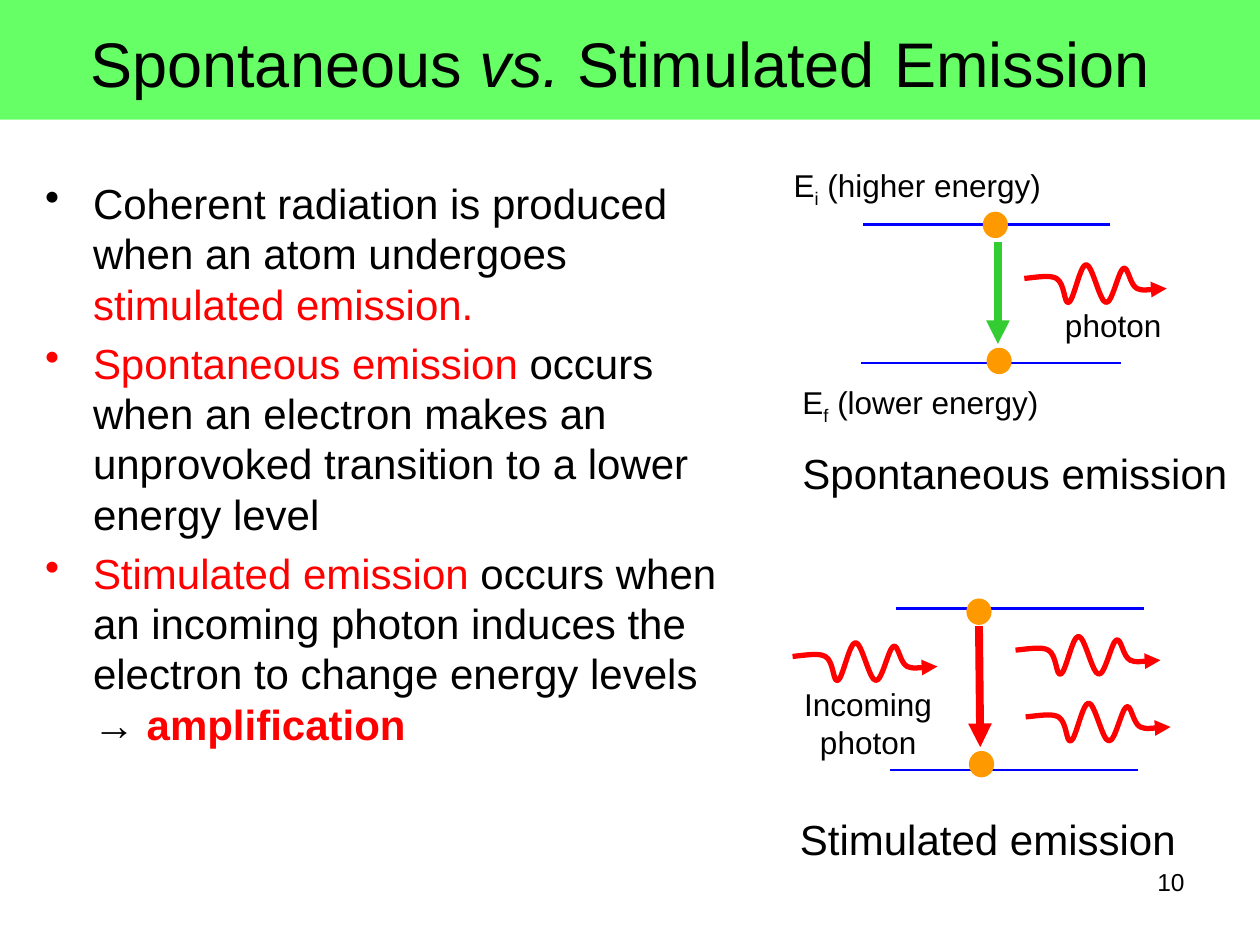
from lxml import etree
from pptx import Presentation
from pptx.dml.color import RGBColor
from pptx.enum.shapes import MSO_CONNECTOR, MSO_SHAPE
from pptx.enum.text import MSO_ANCHOR, PP_ALIGN
from pptx.oxml.ns import qn
from pptx.util import Inches, Pt

COLORS = {
    "banner": "66FF66", "text": "000000", "accent": "FF0000",
    "level": "0000FF", "electron": "FF9900", "decay": "33CC33",
}
WAVE_SIZE = (1.15, 0.33)
WAVE_POINTS = [
    (0, 0.11),
    (0.1, 0.1), (0.21, 0.08), (0.26, 0.11),
    (0.33, 0.15), (0.32, 0.32), (0.36, 0.3),
    (0.4, 0.28), (0.45, 0), (0.5, 0),
    (0.55, 0), (0.61, 0.3), (0.66, 0.3),
    (0.71, 0.31), (0.76, 0.05), (0.8, 0.03),
    (0.84, 0.01), (0.85, 0.16), (0.91, 0.19),
    (0.96, 0.21), (1.1, 0.19), (1.15, 0.19),
]


def color_of(name):
    """Return the named colour."""
    return RGBColor.from_string(COLORS[name])


def write_text(shape, paragraphs, size=18, align=PP_ALIGN.LEFT, wrap=True,
               anchor=MSO_ANCHOR.TOP, bullet=None):
    """Fill a shape with paragraphs, each a list of (text, format) runs."""
    frame = shape.text_frame
    frame.word_wrap = wrap
    frame.vertical_anchor = anchor
    for index, runs in enumerate(paragraphs):
        paragraph = frame.paragraphs[0] if index == 0 else frame.add_paragraph()
        paragraph.alignment = align
        if bullet:
            paragraph.space_before = Pt(size * 0.2)
            properties = paragraph._p.get_or_add_pPr()
            properties.set("marL", str(Inches(0.38)))
            properties.set("indent", str(-Inches(0.38)))
            etree.SubElement(properties, qn("a:buChar")).set("char", bullet)
        for text, style in runs:
            run = paragraph.add_run()
            run.text = text
            font = run.font
            font.name = "Arial"
            font.size = Pt(style.get("size", size))
            font.bold = style.get("bold", False)
            font.italic = style.get("italic", False)
            font.color.rgb = color_of(style.get("color", "text"))
            if "baseline" in style:
                run._r.get_or_add_rPr().set("baseline", str(style["baseline"]))


def add_text(slide, left, top, width, height, paragraphs, **style):
    """Add a text box with formatted paragraphs."""
    box = slide.shapes.add_textbox(*map(Inches, (left, top, width, height)))
    write_text(box, paragraphs, **style)


def add_filled(slide, kind, left, top, width, height, color):
    """Add a preset shape with a plain fill and no outline."""
    shape = slide.shapes.add_shape(kind, *map(Inches, (left, top, width, height)))
    shape.shadow.inherit = False
    shape.fill.solid()
    shape.fill.fore_color.rgb = color_of(color)
    shape.line.fill.background()
    return shape


def style_line(shape, color, width, arrow):
    """Set the stroke of a line and its optional arrowhead."""
    shape.line.color.rgb = color_of(color)
    shape.line.width = Pt(width)
    if arrow:
        outline = shape.line._get_or_add_ln()
        etree.SubElement(outline, qn("a:tailEnd")).set("type", "triangle")


def add_line(slide, start, end, color, width, arrow=False):
    """Add a straight line between two points."""
    line = slide.shapes.add_connector(
        MSO_CONNECTOR.STRAIGHT, *map(Inches, (*start, *end)))
    style_line(line, color, width, arrow)
    etree.SubElement(line._element.spPr, qn("a:effectLst"))


def add_level(slide, left, top, width):
    """Add a horizontal energy level."""
    add_line(slide, (left, top), (left + width, top), "level", 1.5)


def add_electron(slide, left, top):
    """Add an electron dot."""
    add_filled(slide, MSO_SHAPE.OVAL, left, top, 0.2, 0.21, "electron")


def add_photon(slide, left, top, width=WAVE_SIZE[0]):
    """Add a wavy photon arrow made of cubic curves."""
    stretch = width / WAVE_SIZE[0]
    points = [(Inches(left + x * stretch), Inches(top + y)) for x, y in WAVE_POINTS]
    builder = slide.shapes.build_freeform(*points[0])
    builder.add_line_segments(points[1:], close=False)
    wave = builder.convert_to_shape()
    segments = list(wave._element.iter(qn("a:lnTo")))
    for first in range(0, len(segments), 3):
        curve = etree.Element(qn("a:cubicBezTo"))
        segments[first].addprevious(curve)
        for segment in segments[first:first + 3]:
            curve.append(segment[0])
            segment.getparent().remove(segment)
    wave.shadow.inherit = False
    wave.fill.background()
    style_line(wave, "accent", 3, True)


def add_title(slide, left, top, width, height):
    """Add the title banner."""
    banner = add_filled(slide, MSO_SHAPE.RECTANGLE, left, top, width, height, "banner")
    write_text(banner, [[
        ("Spontaneous ", {}), ("vs.", {"italic": True}), (" Stimulated", {}),
        (" ", {"size": 40}), ("Emission", {}), (" ", {"size": 40}),
    ]], size=36, align=PP_ALIGN.CENTER, anchor=MSO_ANCHOR.MIDDLE)


def add_body(slide, left, top, width, height):
    """Add the bulleted explanation."""
    red = {"color": "accent"}
    add_text(slide, left, top, width, height, [
        [("Coherent radiation is produced when an atom undergoes ", {}),
         ("stimulated emission.", red)],
        [("Spontaneous emission", red),
         (" occurs when an electron makes an unprovoked transition to a lower "
          "energy level", {})],
        [("Stimulated emission", red),
         (" occurs when an incoming photon induces the electron to change "
          "energy levels → ", {}),
         ("amplification", {**red, "bold": True})],
    ], size=24, bullet="•")


def add_spontaneous(slide, left, top):
    """Add the spontaneous emission diagram."""
    add_level(slide, left + 0.65, top + 0.51, 1.96)
    add_level(slide, left + 0.63, top + 1.61, 2.07)
    add_electron(slide, left + 1.6, top + 0.41)
    add_line(slide, (left + 1.72, top + 0.65), (left + 1.72, top + 1.46),
             "decay", 4.5, arrow=True)
    add_photon(slide, left + 1.93, top + 0.83, 1.13)
    labels = [(0, 0, 2.17, "i", " (higher energy)", False),
              (0.07, 1.72, 2.49, "f", " (lower energy)", True)]
    for x, y, width, state, note, wrap in labels:
        add_text(slide, left + x, top + y, width, 0.4,
                 [[("E", {}), (state, {"baseline": -25000}), (note, {})]], wrap=wrap)
    add_electron(slide, left + 1.63, top + 1.49)
    add_text(slide, left + 2.15, top + 1.11, 0.97, 0.4, [[("photon", {})]],
             align=PP_ALIGN.CENTER, wrap=False)
    add_text(slide, left + 0.07, top + 2.23, 3.58, 0.5,
             [[("Spontaneous emission", {})]], size=24, wrap=False)


def add_stimulated(slide, left, top):
    """Add the stimulated emission diagram."""
    for x, y in [(0.86, 0.08), (0.81, 1.36)]:
        add_level(slide, left + x, top + y, 1.97)
    for x, y in [(1.42, 0), (1.44, 1.21)]:
        add_electron(slide, left + x, top + y)
    add_line(slide, (left + 1.52, top + 0.22), (left + 1.53, top + 1.18),
             "accent", 4.5, arrow=True)
    for x, y in [(0.04, 0.35), (1.89, 0.83), (1.81, 0.3)]:
        add_photon(slide, left + x, top + y)
    add_text(slide, left, top + 1.66, 3.19, 0.5,
             [[("Stimulated emission", {})]], size=24, wrap=False)
    add_text(slide, left + 0.03, top + 0.64, 1.22, 0.7,
             [[("Incoming", {})], [("photon", {})]],
             align=PP_ALIGN.CENTER, wrap=False)


def main():
    """Build and save the slide."""
    presentation = Presentation()
    presentation.slide_width = Inches(10)
    presentation.slide_height = Inches(7.5)
    slide = presentation.slides.add_slide(presentation.slide_layouts[6])
    add_title(slide, 0, 0, 10, 0.95)
    add_body(slide, 0.26, 1.36, 5.61, 4.69)
    add_stimulated(slide, 6.25, 4.75)
    add_spontaneous(slide, 6.2, 1.27)
    add_text(slide, 7.17, 6.83, 2.33, 0.52, [[("10", {})]],
             size=14, align=PP_ALIGN.RIGHT)
    presentation.save("out.pptx")


if __name__ == "__main__":
    main()
